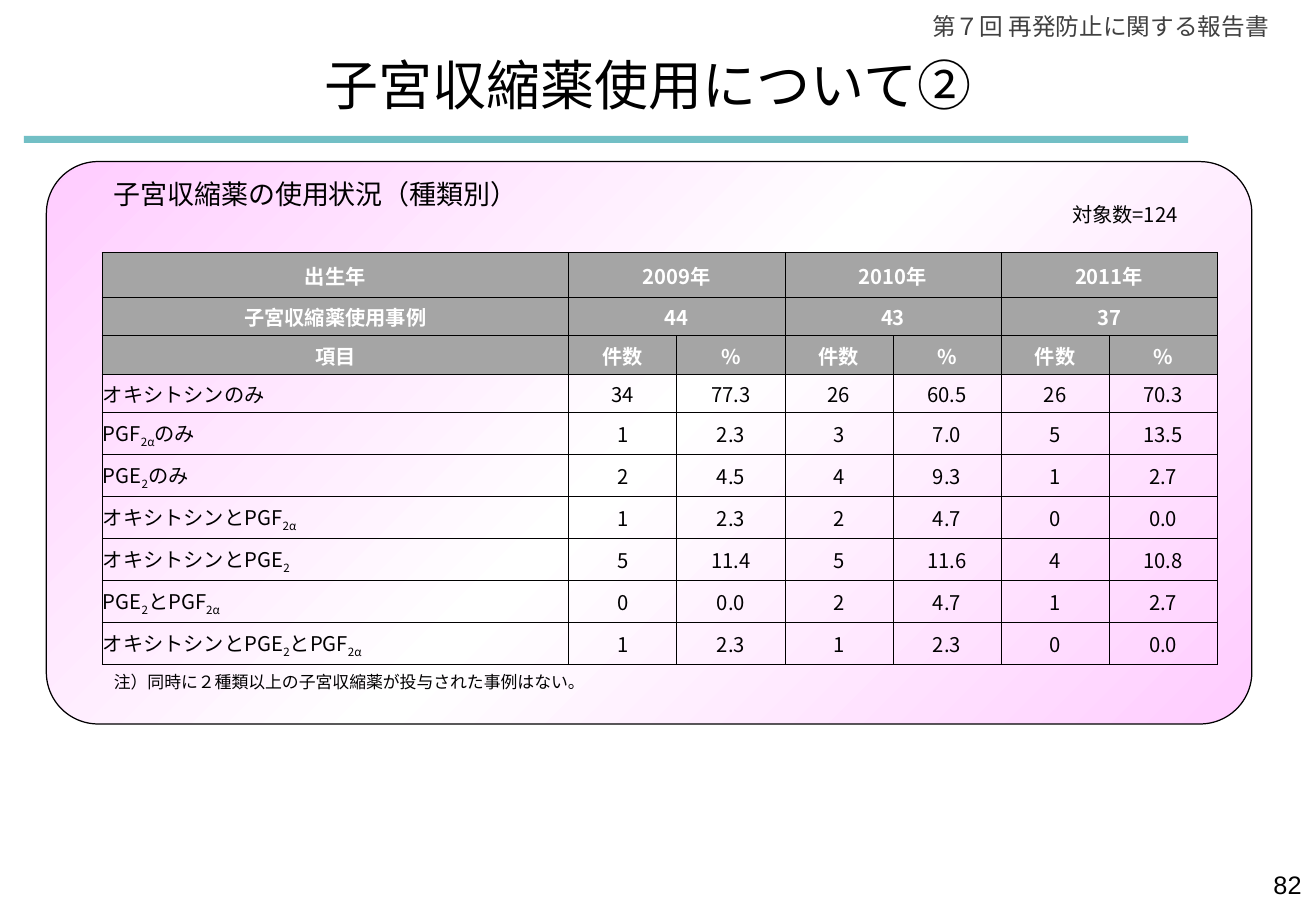
from copy import deepcopy

from lxml import etree
from pptx import Presentation
from pptx import util as u
from pptx.dml.color import RGBColor
from pptx.enum import shapes, text
from pptx.oxml import ns

Cm = u.Cm
COLORS = {"black": "000000", "white": "FFFFFF", "gray": "404040",
          "header": "A5A5A5", "teal": "72BFC5", "pink": "FFCCFF"}
CJK = "Noto Sans CJK JP"
LEFT, CENTER, RIGHT = (text.PP_ALIGN.LEFT, text.PP_ALIGN.CENTER,
                       text.PP_ALIGN.RIGHT)

YEARS = [("2009年", "44"), ("2010年", "43"), ("2011年", "37")]
# Text between tildes is subscript
ROWS = [
    ("オキシトシンのみ", "34", "77.3", "26", "60.5", "26", "70.3"),
    ("PGF~2α~のみ", "1", "2.3", "3", "7.0", "5", "13.5"),
    ("PGE~2~のみ", "2", "4.5", "4", "9.3", "1", "2.7"),
    ("オキシトシンとPGF~2α~", "1", "2.3", "2", "4.7", "0", "0.0"),
    ("オキシトシンとPGE~2~", "5", "11.4", "5", "11.6", "4", "10.8"),
    ("PGE~2~とPGF~2α~", "0", "0.0", "2", "4.7", "1", "2.7"),
    ("オキシトシンとPGE~2~とPGF~2α~", "1", "2.3", "1", "2.3", "0", "0.0"),
]


def rgb(name):
    return RGBColor.from_string(COLORS[name])


def write(tf, content, size=12, font=CJK, color="black", bold=False,
          align=LEFT):
    p = tf.paragraphs[0]
    p.alignment = align
    for i, part in enumerate(content.split("~")):
        if not part:
            continue
        r = p.add_run()
        r.text = part
        r.font.size = u.Pt(size)
        r.font.bold = bold
        r.font.color.rgb = rgb(color)
        r.font.name = font
        rPr = r.font._element
        etree.SubElement(rPr, ns.qn("a:ea"), typeface=CJK)
        if i % 2:
            rPr.set("baseline", "-25000")


def place(s, left, top, width, height):
    s.left, s.top, s.width, s.height = map(Cm, (left, top, width, height))


def add_text(slide, box, content, **fmt):
    s = slide.shapes.add_textbox(*map(Cm, box))
    s.text_frame.word_wrap = True
    write(s.text_frame, content, **fmt)


def add_title(slide, content):
    s = slide.shapes.title
    place(s, 3.48, 0.99, 20.14, 1.55)
    s.text_frame.vertical_anchor = text.MSO_ANCHOR.MIDDLE
    write(s.text_frame, content, size=32, align=CENTER)


def add_bar(slide):
    s = slide.shapes.add_shape(shapes.MSO_SHAPE.RECTANGLE,
                               Cm(0.5), Cm(2.84), Cm(24.34), Cm(0.15))
    s.shadow.inherit = False
    s.fill.solid()
    s.fill.fore_color.rgb = rgb("teal")
    s.line.fill.background()


def add_panel(slide):
    s = slide.shapes.add_shape(shapes.MSO_SHAPE.ROUNDED_RECTANGLE,
                               Cm(0.97), Cm(3.38), Cm(25.2), Cm(11.76))
    s.shadow.inherit = False
    s.adjustments[0] = 0.092
    s.line.color.rgb = rgb("black")
    s.line.width = u.Pt(0.75)
    s.fill.gradient()
    s.fill.gradient_angle = 315
    # A gradient has two stops at first; this one needs three
    stop_list = s._element.spPr.find(".//" + ns.qn("a:gsLst"))
    stop_list.append(deepcopy(stop_list[0]))
    for i, (stop, name) in enumerate(zip(s.fill.gradient_stops,
                                         ("pink", "white", "pink"))):
        stop.position = i / 2
        stop.color.rgb = rgb(name)


def add_borders(cell):
    tcPr = cell._tc.get_or_add_tcPr()
    for side in "LRTB":
        ln = etree.SubElement(tcPr, ns.qn(f"a:ln{side}"), w=str(u.Pt(0.5)))
        fill = etree.SubElement(ln, ns.qn("a:solidFill"))
        etree.SubElement(fill, ns.qn("a:srgbClr"), val=COLORS["black"])


def fill_cell(cell, content, header, align):
    cell.margin_left = cell.margin_right = cell.margin_top = Cm(0.02)
    cell.margin_bottom = 0
    cell.vertical_anchor = text.MSO_ANCHOR.MIDDLE
    add_borders(cell)
    if header:
        cell.fill.solid()
        cell.fill.fore_color.rgb = rgb("header")
    else:
        cell.fill.background()
    write(cell.text_frame, content, bold=header, align=align,
          color="white" if header else "black")


def add_usage_table(slide):
    years, cases, heads = ["出生年"], ["子宮収縮薬使用事例"], ["項目"]
    for year, count in YEARS:
        years += [year, ""]
        cases += [count, ""]
        heads += ["件数", "%"]
    data = [years, cases, heads, *ROWS]
    widths = [9.76] + [2.26] * 6
    heights = [0.94] + [0.8] * 3 + [0.88] * 6
    tbl = slide.shapes.add_table(len(data), len(widths), Cm(2.13), Cm(5.28),
                                 Cm(sum(widths)), Cm(sum(heights))).table
    tbl.first_row = tbl.horz_banding = False
    for col, width in zip(tbl.columns, widths):
        col.width = Cm(width)
    for row, height in zip(tbl.rows, heights):
        row.height = Cm(height)
    for i, row in enumerate(data):
        for j, content in enumerate(row):
            header = i < 3
            fill_cell(tbl.cell(i, j), content, header,
                      CENTER if header or j else LEFT)
    # Each year spans its count and percentage
    for i in range(2):
        for j in range(1, len(widths), 2):
            tbl.cell(i, j).merge(tbl.cell(i, j + 1))


def main():
    prs = Presentation()
    prs.slide_width, prs.slide_height = Cm(27.51), Cm(19.05)
    slide = prs.slides.add_slide(prs.slide_layouts[5])

    # Heading
    add_bar(slide)
    add_text(slide, (18.75, 0.13, 8.03, 0.86), "第７回 再発防止に関する報告書",
             size=14, font="Arial", color="gray", align=RIGHT)
    add_title(slide, "子宮収縮薬使用について②")

    # Panel with its captions and table
    add_panel(slide)
    add_text(slide, (2.13, 13.92, 23.19, 0.69),
             "注）同時に２種類以上の子宮収縮薬が投与された事例はない。",
             size=10, font="Arial")
    add_text(slide, (2.13, 3.58, 17.81, 0.94),
             "子宮収縮薬の使用状況（種類別）", size=16)
    add_text(slide, (18.87, 4.11, 6, 0.76), "対象数=124", align=RIGHT)
    add_usage_table(slide)

    # Page number
    add_text(slide, (21.03, 18.06, 6.43, 0.99), "82", size=15, font="Arial",
             align=RIGHT)
    prs.save("out.pptx")


if __name__ == "__main__":
    main()
